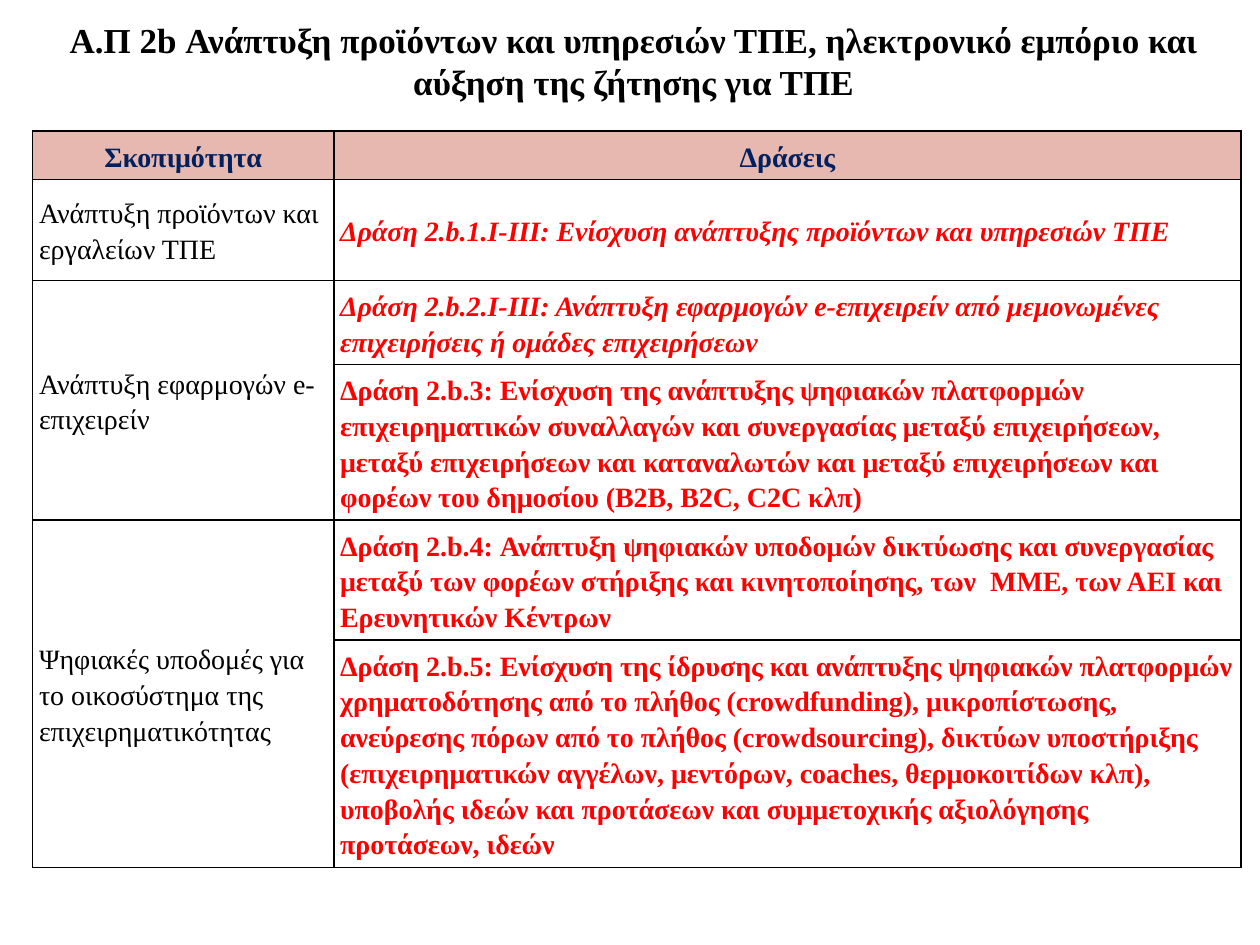
from dataclasses import dataclass
from lxml.etree import SubElement as Sub
from pptx import Presentation as Deck
from pptx.dml.color import RGBColor as Rgb
from pptx.enum.text import MSO_ANCHOR as Anchor, PP_ALIGN as Align
from pptx.oxml.ns import qn
from pptx.util import Inches, Pt


@dataclass(frozen=True)
class Theme:
    face: str = "Times New Roman"
    black: str = "000000"
    red: str = "FF0000"
    navy: str = "002060"
    rose: str = "E6B8AF"
    head: int = 20
    body: int = 16
    rule: int = 1
    inset: float = 0.05
    lead: float = 1.15


theme = Theme()

TITLE = ("Α.Π 2b Ανάπτυξη προϊόντων και υπηρεσιών ΤΠΕ, ηλεκτρονικό εμπόριο "
         "και αύξηση της ζήτησης για ΤΠΕ")
HEADS = ("Σκοπιμότητα", "Δράσεις")
GOALS = (
    ("Ανάπτυξη προϊόντων και εργαλείων ΤΠΕ", (
        ("Δράση 2.b.1.Ι-III: Ενίσχυση ανάπτυξης προϊόντων και υπηρεσιών ΤΠΕ", True),
    )),
    ("Ανάπτυξη εφαρμογών e-επιχειρείν", (
        ("Δράση 2.b.2.I-ΙΙΙ: Ανάπτυξη εφαρμογών e-επιχειρείν από μεμονωμένες "
         "επιχειρήσεις ή ομάδες επιχειρήσεων", True),
        ("Δράση 2.b.3: Ενίσχυση της ανάπτυξης ψηφιακών πλατφορμών επιχειρηματικών "
         "συναλλαγών και συνεργασίας μεταξύ επιχειρήσεων, μεταξύ επιχειρήσεων και "
         "καταναλωτών και μεταξύ επιχειρήσεων και φορέων του δημοσίου "
         "(B2B, B2C, C2C κλπ)", False),
    )),
    ("Ψηφιακές υποδομές για το οικοσύστημα της επιχειρηματικότητας", (
        ("Δράση 2.b.4: Ανάπτυξη ψηφιακών υποδομών δικτύωσης και συνεργασίας μεταξύ "
         "των φορέων στήριξης και κινητοποίησης, των  MME, των ΑΕΙ και "
         "Ερευνητικών Κέντρων", False),
        ("Δράση 2.b.5: Ενίσχυση της ίδρυσης και ανάπτυξης ψηφιακών πλατφορμών "
         "χρηματοδότησης από το πλήθος (crowdfunding), μικροπίστωσης, ανεύρεσης "
         "πόρων από το πλήθος (crowdsourcing), δικτύων υποστήριξης (επιχειρηματικών "
         "αγγέλων, μεντόρων, coaches, θερμοκοιτίδων κλπ), υποβολής ιδεών και "
         "προτάσεων και συμμετοχικής αξιολόγησης προτάσεων, ιδεών", False),
    )),
)
COLS = (2.39, 7.2)
ROWS = (0.34, 0.8, 0.57, 0.8, 0.57, 1.15)


def style(par, size, tint, bold=True, slant=False, align=Align.LEFT):
    par.alignment = align
    font = par.font
    font.name, font.size = theme.face, Pt(size)
    font.bold, font.italic = bold, slant
    font.color.rgb = Rgb.from_string(tint)


def frame(cell):
    props = cell._tc.get_or_add_tcPr()
    for side in ("lnL", "lnR", "lnT", "lnB"):
        line = Sub(props, qn(f"a:{side}"), w=str(Pt(theme.rule)))
        Sub(Sub(line, qn("a:solidFill")), qn("a:srgbClr"), val=theme.black)


def write(cell, text, tint, **look):
    cell.text = text
    par = cell.text_frame.paragraphs[0]
    par.line_spacing = theme.lead
    style(par, theme.body, tint, **look)


def title(slide, box):
    text = slide.shapes.add_textbox(*box).text_frame
    text.word_wrap = True
    text.text = TITLE
    style(text.paragraphs[0], theme.head, theme.black, align=Align.CENTER)


def grid(slide, box):
    shape = slide.shapes.add_table(len(ROWS), len(COLS), *box)
    table = shape.table
    table.first_row = table.horz_banding = False
    for col, width in zip(table.columns, COLS):
        col.width = int(box[2] * width / sum(COLS))
    for row, height in zip(table.rows, ROWS):
        row.height = Inches(height)
    shape.height = box[3]
    pad = Inches(theme.inset)
    for cell in table.iter_cells():
        frame(cell)
        cell.fill.background()
        cell.vertical_anchor = Anchor.MIDDLE
        cell.margin_left = cell.margin_right = pad
        cell.margin_top = cell.margin_bottom = pad
    for col, text in enumerate(HEADS):
        cell = table.cell(0, col)
        cell.fill.solid()
        cell.fill.fore_color.rgb = Rgb.from_string(theme.rose)
        cell.vertical_anchor = Anchor.TOP
        write(cell, text, theme.navy, align=Align.CENTER)
    row = 1
    for goal, acts in GOALS:
        first = table.cell(row, 0)
        write(first, goal, theme.black, bold=False)
        if len(acts) > 1:
            first.merge(table.cell(row + len(acts) - 1, 0))
        for text, slant in acts:
            write(table.cell(row, 1), text, theme.red, slant=slant)
            row += 1


def main():
    deck = Deck()
    deck.slide_width, deck.slide_height = Inches(10), Inches(7.5)
    slide = deck.slides.add_slide(deck.slide_layouts[6])
    grid(slide, [Inches(n) for n in (0.26, 1.04, sum(COLS), 6.25)])
    title(slide, [Inches(n) for n in (0.3, 0.1, 9.46, 0.77)])
    deck.save("out.pptx")


if __name__ == "__main__":
    main()
